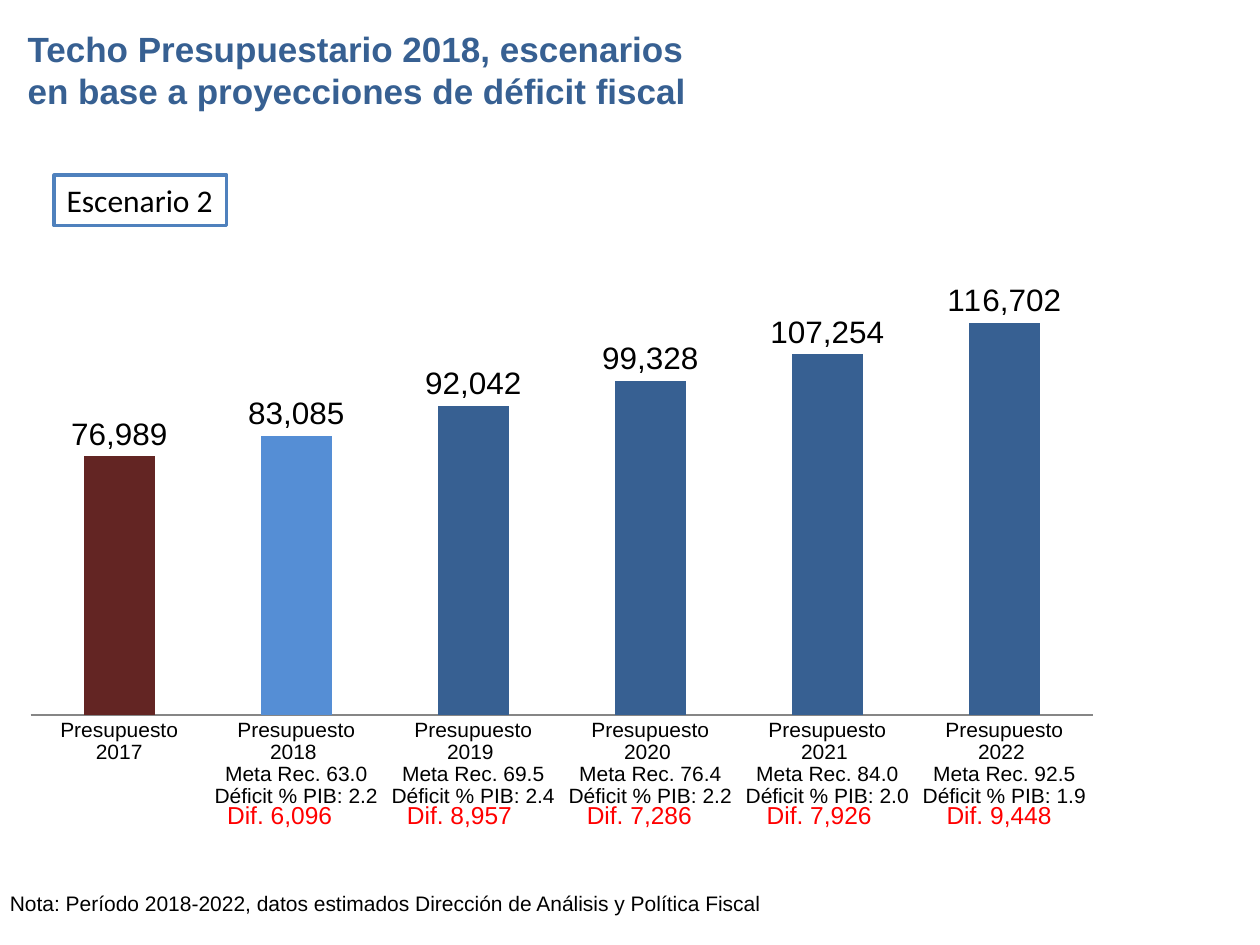
import pptx
import pptx.chart.data
import pptx.dml.color
import pptx.enum.chart
import pptx.enum.shapes
import pptx.enum.text
import pptx.oxml
import pptx.oxml.ns
import pptx.util
from pptx.util import Inches

COLORS = {
    "title": "376092", "text": "000000", "difference": "FF0000",
    "white": "FFFFFF", "border": "4F81BD", "axis": "868686",
    "base": "632523", "current": "558ED5", "projected": "376092",
}
BUDGETS = [76989, 83085, 92042, 99328, 107254, 116702]
# Year, revenue target, deficit as % of GDP
TARGETS = [(2018, "63.0", "2.2"), (2019, "69.5", "2.4"), (2020, "76.4", "2.2"),
           (2021, "84.0", "2.0"), (2022, "92.5", "1.9")]


def rgb(name):
    return pptx.dml.color.RGBColor.from_string(COLORS[name])


def write(sp, text, size, color="text", font="Arial", bold=False, align="LEFT",
          anchor="TOP", wrap=True):
    tf = sp.text_frame
    tf.word_wrap = wrap
    tf.vertical_anchor = getattr(pptx.enum.text.MSO_ANCHOR, anchor)
    p = tf.paragraphs[0]
    p.alignment = getattr(pptx.enum.text.PP_ALIGN, align)
    r = p.add_run()
    r.text = text
    r.font.name, r.font.size, r.font.bold = font, pptx.util.Pt(size), bold
    r.font.color.rgb = rgb(color)
    return tf


def add_title(s, x, y, w, h):
    sp = s.shapes.add_textbox(x, y, w, h)
    tf = write(sp, "Techo Presupuestario 2018, escenarios en base a proyecciones "
               "de déficit fiscal", 20, "title", bold=True, anchor="MIDDLE")
    tf.margin_bottom = Inches(0.38)


def set_plot_layout(chart, **box):
    """Fix the inner plot area as fractions of the chart."""
    plot_area = chart._chartSpace.chart.plotArea
    for old in plot_area.findall(pptx.oxml.ns.qn("c:layout")):
        plot_area.remove(old)
    parts = [("layoutTarget", "inner"), ("xMode", "edge"), ("yMode", "edge"), *box.items()]
    inner = "".join(f'<c:{tag} val="{val}"/>' for tag, val in parts)
    plot_area.insert(0, pptx.oxml.parse_xml(
        f'<c:layout {pptx.oxml.ns.nsdecls("c")}><c:manualLayout>{inner}'
        "</c:manualLayout></c:layout>"))


def add_budget_chart(s, x, y, w, h):
    data = pptx.chart.data.CategoryChartData(number_format="#,##0")
    data.categories = ["Presupuesto 2017"] + [
        f"Presupuesto {year} \nMeta Rec. {target}\nDéficit % PIB: {deficit}"
        for year, target, deficit in TARGETS]
    data.add_series("Series 1", BUDGETS)
    chart = s.shapes.add_chart(pptx.enum.chart.XL_CHART_TYPE.COLUMN_CLUSTERED,
                               x, y, w, h, data).chart
    chart.has_legend = chart.has_title = False
    chart.font.name, chart.font.size = "Arial", pptx.util.Pt(10)
    chart.font.color.rgb = rgb("text")
    set_plot_layout(chart, x=0.028, y=0, w=0.969, h=0.852)

    axis = chart.category_axis
    axis.major_tick_mark = pptx.enum.chart.XL_TICK_MARK.NONE
    axis.tick_labels.font.size = pptx.util.Pt(12)
    axis.format.line.color.rgb = rgb("axis")
    values = chart.value_axis
    values.visible = values.has_major_gridlines = False
    values.minimum_scale, values.maximum_scale = 0, 140000

    plot = chart.plots[0]
    plot.gap_width, plot.overlap, plot.vary_by_categories = 150, -25, False
    plot.has_data_labels = True
    labels = plot.data_labels
    labels.show_value = True
    labels.number_format, labels.number_format_is_linked = "#,##0", False
    labels.position = pptx.enum.chart.XL_LABEL_POSITION.OUTSIDE_END
    labels.font.size = pptx.util.Pt(18)
    for i, name in enumerate(["base", "current"] + ["projected"] * 4):
        fill = plot.series[0].points[i].format.fill
        fill.solid()
        fill.fore_color.rgb = rgb(name)


def add_differences(s, x, y, w, h):
    """Year-on-year increases, one box under each projected column."""
    box_w = Inches(1.06)
    step = (w - box_w) / (len(BUDGETS) - 2)
    for i, (before, after) in enumerate(zip(BUDGETS, BUDGETS[1:])):
        sp = s.shapes.add_textbox(int(x + i * step), y, box_w, h)
        write(sp, f"Dif. {after - before:,}", 14, "difference",
              align="CENTER", anchor="MIDDLE")


def add_note(s, x, y, w, h):
    write(s.shapes.add_textbox(x, y, w, h),
          "Nota: Período 2018-2022, datos estimados Dirección de Análisis y "
          "Política Fiscal", 12, wrap=False)


def add_scenario_tag(s, x, y, w, h):
    sp = s.shapes.add_shape(pptx.enum.shapes.MSO_SHAPE.RECTANGLE, x, y, w, h)
    sp.shadow.inherit = False
    sp.fill.solid()
    sp.fill.fore_color.rgb = rgb("white")
    sp.line.color.rgb = rgb("border")
    sp.line.width = pptx.util.Pt(2)
    write(sp, "Escenario 2", 18, font="Calibri", wrap=False)


def main():
    prs = pptx.Presentation()
    prs.slide_width, prs.slide_height = Inches(10), Inches(7.5)
    s = prs.slides.add_slide(prs.slide_layouts[6])
    regions = [
        (add_title, 0.12, 0.06, 5.51, 1.32),
        (add_budget_chart, 0, 1.94, 8.7, 4.47),
        (add_differences, 1.69, 6.11, 6.77, 0.71),
        (add_note, -0.02, 7.02, 6.21, 0.3),
        (add_scenario_tag, 0.43, 1.39, 1.37, 0.4),
    ]
    for add_region, *box in regions:
        add_region(s, *map(Inches, box))
    prs.save("out.pptx")


if __name__ == "__main__":
    main()
